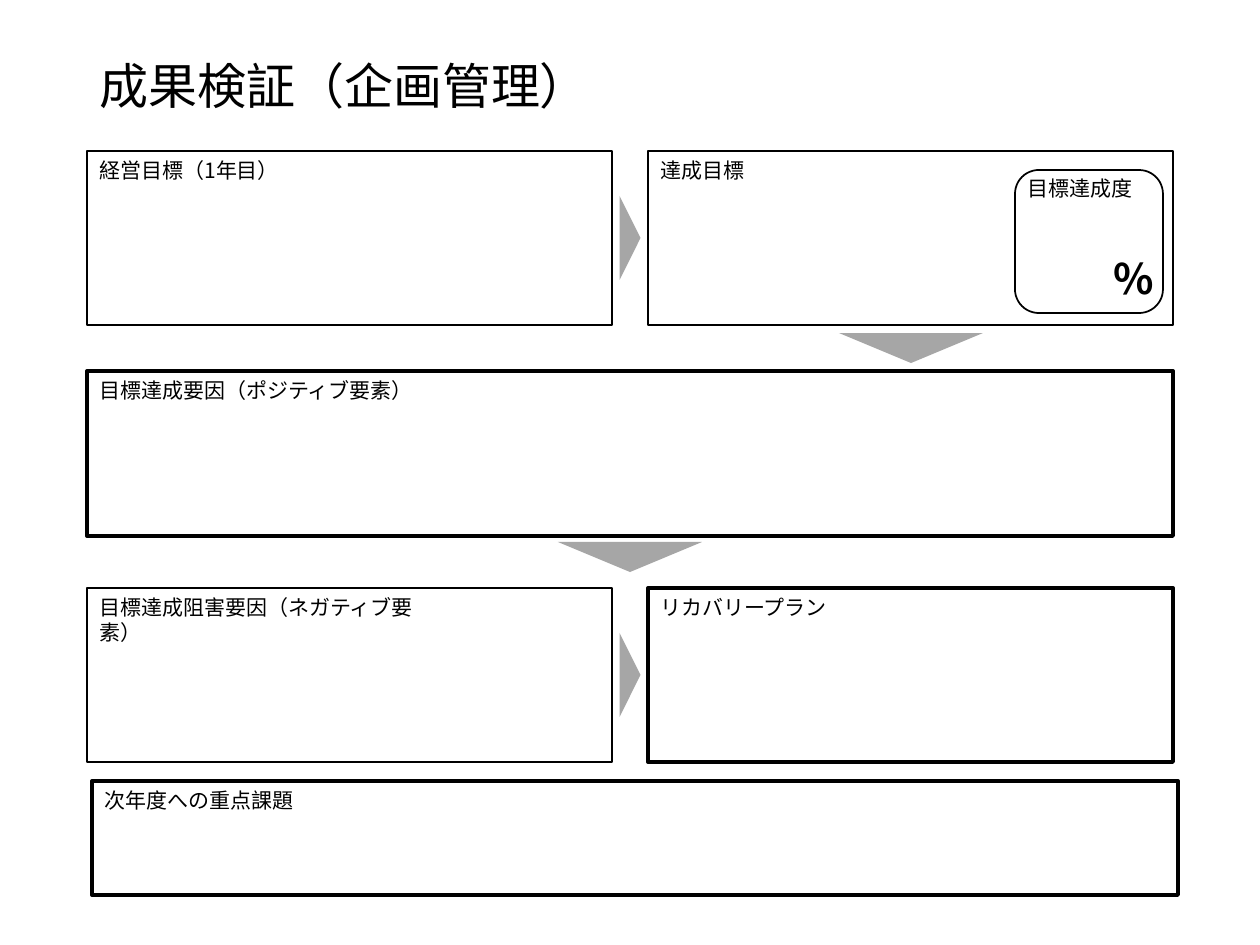
from collections import namedtuple

from pptx import Presentation
from pptx import util as u
from pptx.dml.color import RGBColor
from pptx.enum import shapes, text
from pptx.oxml.ns import qn

EMU_PER_PX = 914400 / 126
FONT = "Noto Sans CJK JP"
BLACK = RGBColor(0, 0, 0)
WHITE = RGBColor(255, 255, 255)
GRAY = RGBColor(0xA6, 0xA6, 0xA6)
THIN = 1
THICK = 2.25
LABEL_HEIGHT = 38
ARROW_BASE = 84
ARROW_DEPTH = 21
WIDE_ARROW_BASE = 144
WIDE_ARROW_DEPTH = 30

Box = namedtuple("Box", "left top width height")


def px(length):
    return u.Emu(round(length * EMU_PER_PX))


def place(box):
    return [px(length) for length in box]


def add_run(paragraph, wording, size, bold=False):
    run = paragraph.add_run()
    run.text = wording
    run.font.size = u.Pt(size)
    run.font.bold = bold
    run.font.name = FONT
    run.font.color.rgb = BLACK
    east_asian = run.font._element.makeelement(qn("a:ea"), {"typeface": FONT})
    run.font._element.find(qn("a:latin")).addnext(east_asian)


def add_text(slide, box, wording, size=12, bold=False, align=text.PP_ALIGN.LEFT):
    frame = slide.shapes.add_textbox(*place(box)).text_frame
    frame.word_wrap = True
    frame.auto_size = text.MSO_AUTO_SIZE.SHAPE_TO_FIT_TEXT
    paragraph = frame.paragraphs[0]
    paragraph.alignment = align
    add_run(paragraph, wording, size, bold)


def add_outline(slide, kind, box, weight):
    shape = slide.shapes.add_shape(kind, *place(box))
    shape.shadow.inherit = False
    shape.fill.solid()
    shape.fill.fore_color.rgb = WHITE
    shape.line.color.rgb = BLACK
    shape.line.width = u.Pt(weight)


def add_panel(slide, box, label, weight, label_width):
    add_outline(slide, shapes.MSO_SHAPE.RECTANGLE, box, weight)
    add_text(slide, Box(box.left, box.top, label_width, LABEL_HEIGHT), label)


def add_arrow(slide, center_x, center_y, base, depth, rotation):
    box = Box(center_x - base / 2, center_y - depth / 2, base, depth)
    shape = slide.shapes.add_shape(shapes.MSO_SHAPE.ISOSCELES_TRIANGLE, *place(box))
    shape.rotation = rotation
    shape.shadow.inherit = False
    shape.fill.solid()
    shape.fill.fore_color.rgb = GRAY
    shape.line.fill.background()


def add_title(slide, box, wording):
    title = slide.shapes.title
    title.left, title.top, title.width, title.height = place(box)
    frame = title.text_frame
    frame.auto_size = text.MSO_AUTO_SIZE.NONE
    frame.vertical_anchor = text.MSO_ANCHOR.MIDDLE
    paragraph = frame.paragraphs[0]
    paragraph.alignment = text.PP_ALIGN.LEFT
    paragraph.line_spacing = 0.9
    add_run(paragraph, wording, 28)


def add_panel_pair(slide, box, labels, weights):
    gap = 36
    width = (box.width - gap) / 2
    for index, (label, weight) in enumerate(zip(labels, weights)):
        left = box.left + index * (width + gap)
        add_panel(slide, Box(left, box.top, width, box.height), label, weight, 367)
    add_arrow(slide, box.left + box.width / 2, box.top + box.height / 2,
              ARROW_BASE, ARROW_DEPTH, 90)


def add_achievement_badge(slide, box):
    add_outline(slide, shapes.MSO_SHAPE.ROUNDED_RECTANGLE, box, THIN)
    add_text(slide, Box(box.left, box.top - 1, 137, LABEL_HEIGHT), "目標達成度")
    add_text(slide, Box(box.left + 73, box.top + 76, 91, 63), "%", 24, True,
             text.PP_ALIGN.CENTER)


def main():
    presentation = Presentation()
    presentation.slide_width = px(1260)
    presentation.slide_height = px(945)
    slide = presentation.slides.add_slide(presentation.slide_layouts[5])

    add_title(slide, Box(87, 50, 1086, 77), "成果検証（企画管理）")
    add_panel_pair(slide, Box(87, 151, 1086, 174),
                   ("経営目標（1年目）", "達成目標"), (THIN, THIN))
    add_achievement_badge(slide, Box(1015, 170, 148, 143))
    add_arrow(slide, 911, 348, WIDE_ARROW_BASE, WIDE_ARROW_DEPTH, 180)
    add_panel(slide, Box(87, 371, 1086, 165),
              "目標達成要因（ポジティブ要素）", THICK, 352)
    add_arrow(slide, 630, 557, WIDE_ARROW_BASE, WIDE_ARROW_DEPTH, 180)
    add_panel_pair(slide, Box(87, 588, 1086, 174),
                   ("目標達成阻害要因（ネガティブ要素）", "リカバリープラン"),
                   (THIN, THICK))
    add_panel(slide, Box(92, 781, 1086, 114), "次年度への重点課題", THICK, 352)

    presentation.save("out.pptx")


if __name__ == "__main__":
    main()
